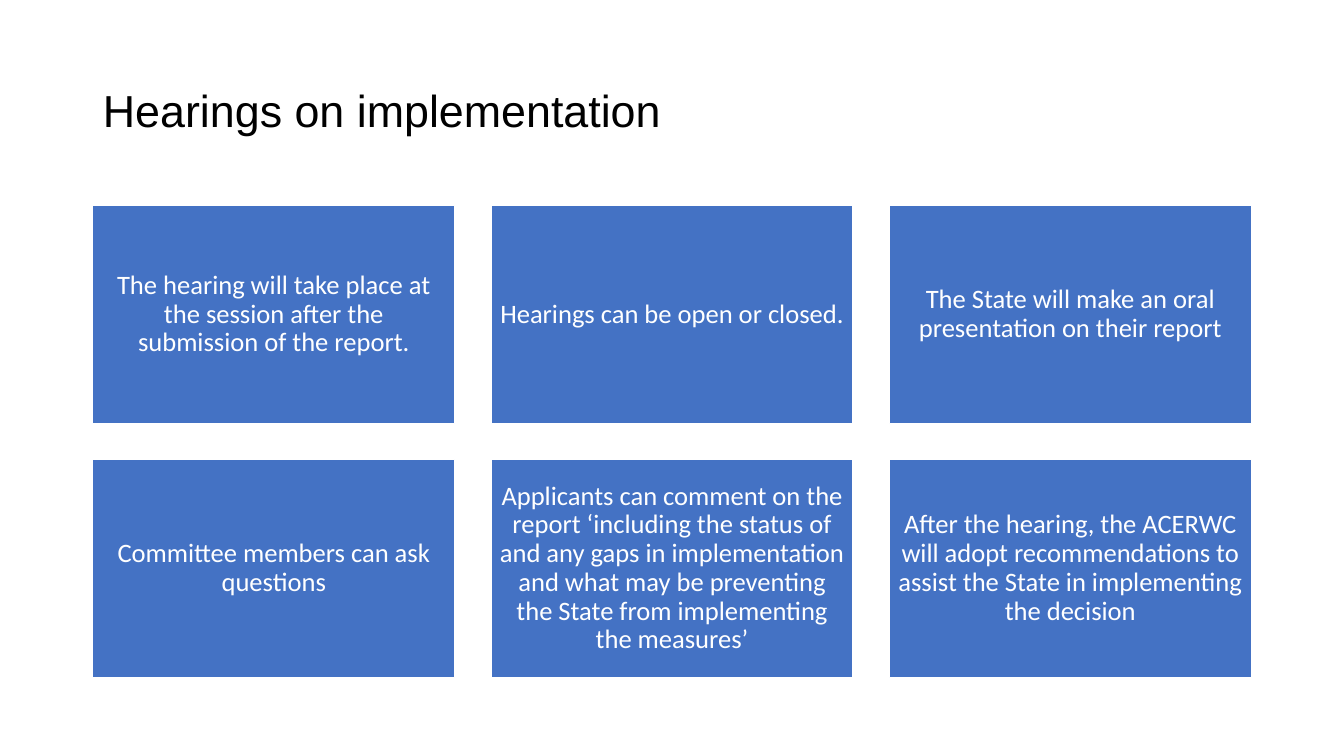
import pptx
import pptx.util
import pptx.dml.color
import pptx.enum.shapes
import pptx.enum.text

PX = 9144  # 100 px to the inch
SLIDE_SIZE = (1333, 750)
TITLE_BOX = (92, 40, 1150, 145)
STEPS_BOX = (92, 204, 1149, 468)
COLUMNS, GAP, INSET = 3, 36, 8

HEADING = "Hearings on implementation"
STEPS = [
    "The hearing will take place at the session after the submission of the report.",
    "Hearings can be open or closed.",
    "The State will make an oral presentation on their report",
    "Committee members can ask questions",
    "Applicants can comment on the report ‘including the status of and any gaps "
    "in implementation and what may be preventing the State from implementing the measures’",
    "After the hearing, the ACERWC will adopt recommendations to assist the State "
    "in implementing the decision",
]

ALIGN = pptx.enum.text.PP_ALIGN
MIDDLE = pptx.enum.text.MSO_ANCHOR.MIDDLE
HEADING_FONT = {"name": "Arial", "size": pptx.util.Pt(32)}
STEP_FONT = {"name": "Calibri", "size": pptx.util.Pt(19)}
STEP_FRAME = {
    "word_wrap": True,
    "vertical_anchor": MIDDLE,
    **{f"margin_{side}": INSET * PX for side in ("left", "top", "right", "bottom")},
}


def apply(target, values):
    for name, value in values.items():
        setattr(target, name, value)


def paint(color_format, hex_color):
    color_format.rgb = pptx.dml.color.RGBColor.from_string(hex_color)


def emu(box):
    return [length * PX for length in box]


def write(frame, text, font_values, color, align):
    frame.text = text
    paragraph = frame.paragraphs[0]
    apply(paragraph, {"alignment": align, "line_spacing": 0.9})
    font = paragraph.runs[0].font
    apply(font, font_values)
    paint(font.color, color)


def add_heading(slide, box):
    heading = slide.shapes.title
    apply(heading, dict(zip(("left", "top", "width", "height"), emu(box))))
    apply(heading.text_frame, {"word_wrap": True, "vertical_anchor": MIDDLE})
    write(heading.text_frame, HEADING, HEADING_FONT, "000000", ALIGN.LEFT)


def add_step(slide, text, box):
    step = slide.shapes.add_shape(pptx.enum.shapes.MSO_SHAPE.RECTANGLE, *emu(box))
    step.shadow.inherit = False
    step.fill.solid()
    paint(step.fill.fore_color, "4472C4")
    paint(step.line.color, "FFFFFF")
    step.line.width = pptx.util.Pt(1)
    apply(step.text_frame, STEP_FRAME)
    write(step.text_frame, text, STEP_FONT, "FFFFFF", ALIGN.CENTER)


def add_step_grid(slide, box):
    left, top, width, height = box
    rows = len(STEPS) // COLUMNS
    step_width = (width - GAP * (COLUMNS - 1)) // COLUMNS
    step_height = (height - GAP * (rows - 1)) // rows
    for index, text in enumerate(STEPS):
        row, column = divmod(index, COLUMNS)
        x = left + column * (step_width + GAP)
        y = top + row * (step_height + GAP)
        add_step(slide, text, (x, y, step_width, step_height))


def main():
    deck = pptx.Presentation()
    deck.slide_width, deck.slide_height = emu(SLIDE_SIZE)
    slide = deck.slides.add_slide(deck.slide_layouts[5])  # title only

    # Heading
    add_heading(slide, TITLE_BOX)
    # Steps of the hearing
    add_step_grid(slide, STEPS_BOX)

    deck.save("out.pptx")


if __name__ == "__main__":
    main()
